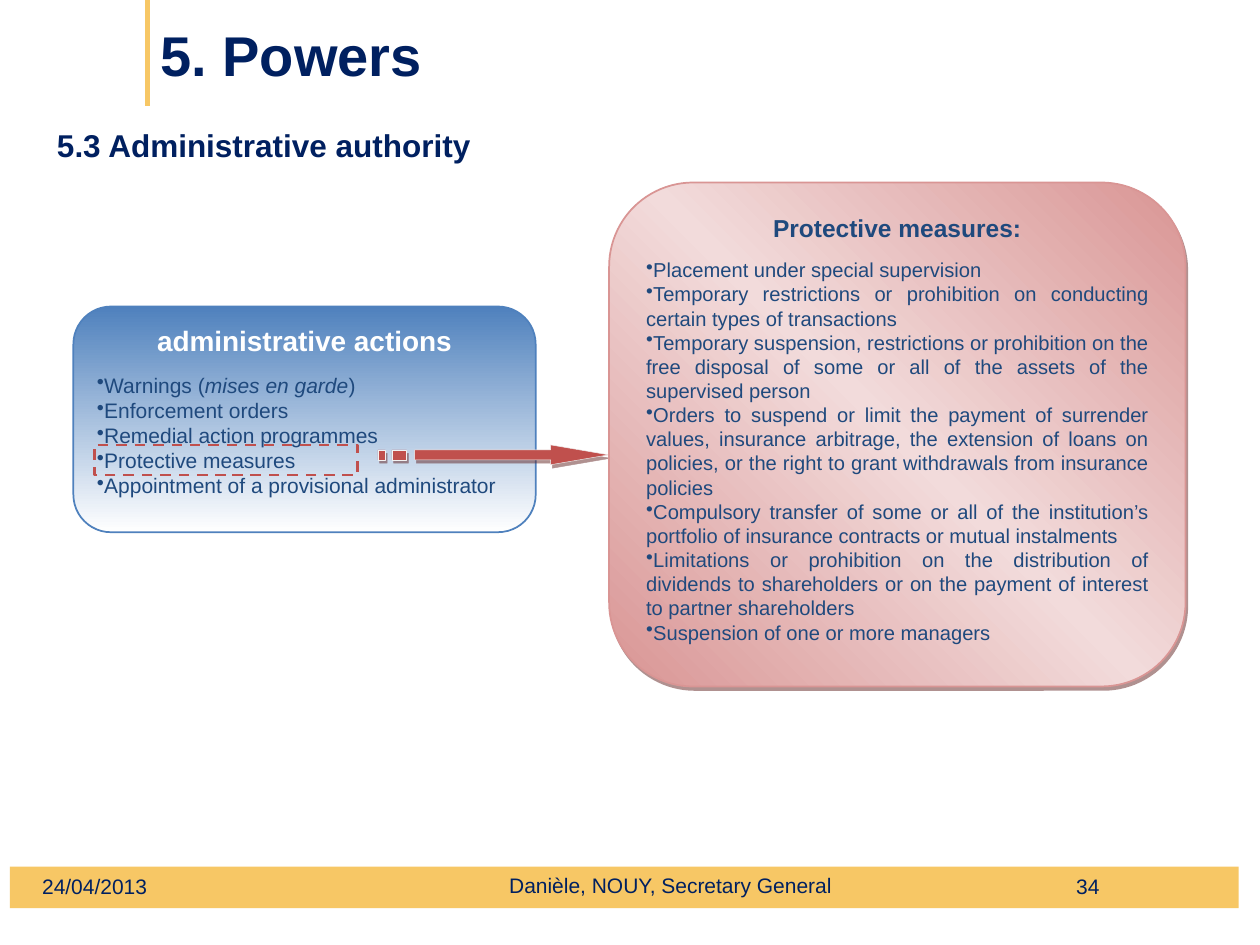
from lxml import etree
from pptx import Presentation, util as u
from pptx.dml.color import RGBColor
from pptx.enum import dml, shapes, text
from pptx.oxml.ns import qn

NAVY, BLUE, GOLD, RED = "002060", "1F497D", "F7C765", "C0504D"
ALIGN = text.PP_ALIGN


def color(hex_value):
    return RGBColor.from_string(hex_value)


def add_xml(parent, tag, **attributes):
    child = etree.SubElement(parent, qn(tag))
    for name, value in attributes.items():
        child.set(name, str(value))
    return child


def cm(*values):
    return [u.Cm(value) for value in values]


class SlideBuilder:
    font = "Arial"

    def __init__(self, slide):
        self.slide = slide

    def span(self, para, words, size, hex_value, bold=False, italic=False):
        span = para.add_run()
        span.text = words
        span.font.name, span.font.size = self.font, u.Pt(size)
        span.font.bold, span.font.italic = bold, italic
        span.font.color.rgb = color(hex_value)

    def title(self, words, place):
        box = self.slide.shapes.title
        box.left, box.top, box.width, box.height = cm(*place)
        box.text_frame.vertical_anchor = text.MSO_ANCHOR.MIDDLE
        para = box.text_frame.paragraphs[0]
        para.alignment = ALIGN.LEFT
        self.span(para, words, 32, NAVY, bold=True)

    def label(self, words, place, size=12, bold=False, align=ALIGN.LEFT,
              anchor=text.MSO_ANCHOR.MIDDLE):
        frame = self.slide.shapes.add_textbox(*cm(*place)).text_frame
        frame.word_wrap = True
        frame.vertical_anchor = anchor
        para = frame.paragraphs[0]
        para.alignment = align
        self.span(para, words, size, NAVY, bold)

    def line(self, start, end, hex_value, width):
        line = self.slide.shapes.add_connector(
            shapes.MSO_CONNECTOR.STRAIGHT, *cm(*start, *end))
        line.line.color.rgb = color(hex_value)
        line.line.width = u.Pt(width)
        add_xml(line._element.spPr, "a:effectLst")

    def outline(self, shape, hex_value, width):
        if hex_value:
            shape.line.color.rgb = color(hex_value)
            shape.line.width = u.Pt(width)
        else:
            shape.line.fill.background()
        shape.shadow.inherit = False

    def rectangle(self, place, fill=None, line=None, width=1.5):
        box = self.slide.shapes.add_shape(shapes.MSO_SHAPE.RECTANGLE, *cm(*place))
        if fill:
            box.fill.solid()
            box.fill.fore_color.rgb = color(fill)
        else:
            box.fill.background()
        self.outline(box, line, width)
        return box

    def shadow(self, shape):
        effects = shape._element.spPr.find(qn("a:effectLst"))
        outer = add_xml(effects, "a:outerShdw", blurRad=0, dist=u.Pt(2.2),
                        dir=63 * 60000, algn="ctr", rotWithShape=0)
        tint = add_xml(outer, "a:srgbClr", val="622423")
        add_xml(tint, "a:alpha", val=50000)

    def gradient(self, shape, colors, angle):
        shape.fill.gradient()
        fill = shape._element.spPr.find(qn("a:gradFill"))
        for child in list(fill):
            fill.remove(child)
        stops = add_xml(fill, "a:gsLst")
        for index, hex_value in enumerate(colors):
            stop = add_xml(stops, "a:gs", pos=index * 100000 // (len(colors) - 1))
            add_xml(stop, "a:srgbClr", val=hex_value)
        add_xml(fill, "a:lin", ang=angle * 60000, scaled=0)

    def card(self, place, colors, angle, line, heading, items, size):
        """Gradient panel; heading is (words, size, colour), items are run lists."""
        box = self.slide.shapes.add_shape(
            shapes.MSO_SHAPE.ROUNDED_RECTANGLE, *cm(*place))
        self.gradient(box, colors, angle)
        self.outline(box, line, 1)
        frame = box.text_frame
        frame.word_wrap = True
        frame.vertical_anchor = text.MSO_ANCHOR.TOP
        para = frame.paragraphs[0]
        para.alignment = ALIGN.CENTER
        self.span(para, *heading, bold=True)
        for index, runs in enumerate(items):
            para = frame.add_paragraph()
            para.alignment = ALIGN.JUSTIFY
            para.space_before = u.Pt(0 if index else 8.5)
            properties = para._p.get_or_add_pPr()
            properties.set("marL", "0")
            properties.set("indent", "0")
            add_xml(properties, "a:buChar", char="•")
            tabs = add_xml(properties, "a:tabLst")
            add_xml(tabs, "a:tab", pos=u.Cm(0.76), algn="l")
            for words, italic in runs:
                self.span(para, words, size, BLUE, italic=italic)
        return box

    def outlines(self, contours, fill, line, width):
        """Closed contours in cm, drawn on a grid of hundredths of a cm."""
        first, *others = [[(round(x * 100), round(y * 100)) for x, y in points]
                          for points in contours]
        builder = self.slide.shapes.build_freeform(*first[0], scale=u.Cm(0.01))
        builder.add_line_segments(first[1:])
        for points in others:
            builder.move_to(*points[0])
            builder.add_line_segments(points[1:])
        shape = builder.convert_to_shape()
        shape.fill.solid()
        shape.fill.fore_color.rgb = color(fill)
        self.outline(shape, line, width)
        return shape


def main():
    deck = Presentation()
    deck.slide_width, deck.slide_height = cm(25.4, 19.05)
    page = SlideBuilder(deck.slides.add_slide(deck.slide_layouts[5]))

    # Footer band and title
    page.rectangle((0.2, 17.47, 24.77, 0.84), fill=GOLD)
    page.line((2.97, 0), (2.97, 2.13), GOLD, 2.75)
    page.title("5. Powers", (2.98, 0, 18.39, 2.18))
    page.label("34", (21.23, 17.46, 1.4, 0.79), align=ALIGN.CENTER)
    page.label("Danièle, NOUY, Secretary General", (8.54, 17.43, 9.96, 0.81),
               align=ALIGN.CENTER)
    page.label("24/04/2013", (0.6, 17.46, 5.92, 0.79))
    page.label("5.3 Administrative authority", (0.9, 2.41, 24, 1.12), size=18,
               bold=True, anchor=text.MSO_ANCHOR.TOP)

    # Administrative actions
    actions = [
        [("Warnings (", False), ("mises en garde", True), (")", False)],
        [("Enforcement orders", False)],
        [("Remedial action programmes", False)],
        [("Protective measures", False)],
        [("Appointment of a provisional administrator", False)],
    ]
    page.card((1.48, 6.18, 9.32, 4.55), ("4F81BD", "FFFFFF"), 90, "4F81BD",
              ("administrative actions", 16, "FFFFFF"), actions, 12)

    # Striped arrow from the highlighted action to its details
    top, bottom = 9.07, 9.27
    arrow = [(11.1, 8.97), (11.1, top), (8.36, top), (8.36, bottom),
             (11.1, bottom), (11.1, 9.37), (12.27, 9.17), (11.1, 8.97)]
    stripes = [[(left, top), (left, bottom), (right, bottom), (right, top), (left, top)]
               for left, right in ((7.9, 8.2), (7.62, 7.77))]
    page.shadow(page.outlines([arrow, *stripes], RED, "F2F2F2", 0.25))
    highlight = page.rectangle((1.9, 8.97, 5.31, 0.61), line=RED)
    highlight.line.dash_style = dml.MSO_LINE.DASH

    # Protective measures
    measures = (
        "Placement under special supervision",
        "Temporary restrictions or prohibition on conducting certain types of transactions",
        "Temporary suspension, restrictions or prohibition on the free disposal of some "
        "or all of the assets of the supervised person",
        "Orders to suspend or limit the payment of surrender values, insurance arbitrage, "
        "the extension of loans on policies, or the right to grant withdrawals from "
        "insurance policies",
        "Compulsory transfer of some or all of the institution’s portfolio of insurance "
        "contracts or mutual instalments",
        "Limitations or prohibition on the distribution of dividends to shareholders or "
        "on the payment of interest to partner shareholders",
        "Suspension of one or more managers",
    )
    details = page.card((12.28, 3.68, 11.62, 10.16), ("D99594", "F2DBDB", "D99594"),
                        315, "D99594", ("Protective measures:", 14, BLUE),
                        [[(words, False)] for words in measures], 11.5)
    page.shadow(details)

    deck.save("out.pptx")


if __name__ == "__main__":
    main()
